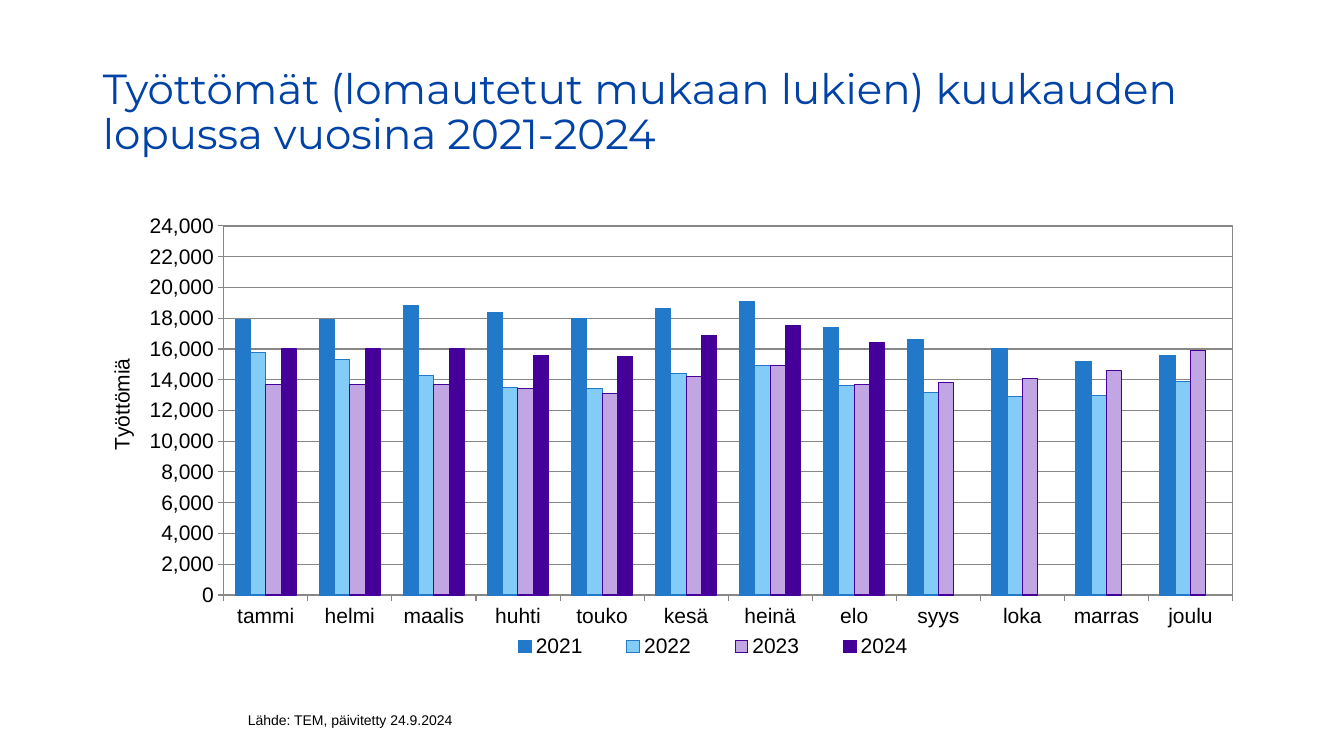
from dataclasses import dataclass

from pptx import Presentation
from pptx.chart.data import CategoryChartData
from pptx.dml.color import RGBColor as Color
from pptx.enum.chart import XL_CHART_TYPE as ChartType
from pptx.enum.chart import XL_LEGEND_POSITION as LegendPosition
from pptx.enum.chart import XL_TICK_MARK as TickMark
from pptx.enum.text import MSO_ANCHOR as Anchor
from pptx.enum.text import MSO_AUTO_SIZE as AutoSize
from pptx.enum.text import PP_ALIGN as Align
from pptx.oxml import parse_xml
from pptx.oxml.ns import nsdecls, qn
from pptx.util import Inches, Pt


@dataclass(frozen=True)
class Theme:
    title_font: str = "Montserrat"
    body_font: str = "Arial"
    title_size: int = 30
    chart_size: int = 15
    source_size: int = 10
    title_color: str = "0042A6"
    text_color: str = "000000"
    grid_color: str = "878787"
    blue: str = "2278C9"
    light_blue: str = "84CCF8"
    lilac: str = "C2A6E3"
    purple: str = "450099"


THEME = Theme()
MONTHS = ["tammi", "helmi", "maalis", "huhti", "touko", "kesä",
          "heinä", "elo", "syys", "loka", "marras", "joulu"]
UNEMPLOYED = {
    "2021": [17900, 17900, 18800, 18400, 18000, 18600,
             19100, 17400, 16600, 16000, 15200, 15600],
    "2022": [15800, 15300, 14300, 13500, 13400, 14400,
             14900, 13600, 13200, 12900, 13000, 13900],
    "2023": [13700, 13700, 13700, 13400, 13100, 14200,
             14900, 13700, 13800, 14100, 14600, 15900],
    "2024": [16000, 16000, 16000, 15600, 15500, 16900,
             17500, 16400, None, None, None, None],
}
YEAR_COLORS = [(THEME.blue, THEME.blue), (THEME.light_blue, THEME.blue),
               (THEME.lilac, THEME.purple), (THEME.purple, THEME.purple)]


def apply_format(target, values):
    for name, value in values.items():
        setattr(target, name, value)


def format_font(font, name, size, color):
    apply_format(font, {"name": name, "size": Pt(size), "bold": False})
    font.color.rgb = Color.from_string(color)


def format_line(line, color):
    line.color.rgb = Color.from_string(color)
    line.width = Pt(0.75)


def place(shape, box):
    apply_format(shape, dict(zip(("left", "top", "width", "height"), map(Inches, box))))


def set_layout(element, index, **values):
    for layout in element.findall(qn("c:layout")):
        element.remove(layout)
    target = '<c:layoutTarget val="inner"/>' if index == 0 else ""
    modes = '<c:xMode val="edge"/><c:yMode val="edge"/>'
    sizes = "".join(f'<c:{name} val="{value}"/>' for name, value in values.items())
    element.insert(index, parse_xml(
        f'<c:layout {nsdecls("c")}><c:manualLayout>{target}{modes}{sizes}'
        "</c:manualLayout></c:layout>"))


def add_title(slide, box):
    title = slide.shapes.title
    place(title, box)
    frame = title.text_frame
    frame.text = "Työttömät (lomautetut mukaan lukien) kuukauden lopussa vuosina 2021-2024"
    apply_format(frame, {"word_wrap": True, "auto_size": AutoSize.NONE,
                         "vertical_anchor": Anchor.MIDDLE})
    paragraph = frame.paragraphs[0]
    apply_format(paragraph, {"alignment": Align.LEFT, "line_spacing": 0.9})
    format_font(paragraph.font, THEME.title_font, THEME.title_size, THEME.title_color)


def add_source(slide, box):
    frame = slide.shapes.add_textbox(*map(Inches, box)).text_frame
    frame.text = "Lähde: TEM, päivitetty 24.9.2024"
    frame.word_wrap = True
    format_font(frame.paragraphs[0].font, THEME.body_font, THEME.source_size, THEME.text_color)


def format_axes(chart):
    value_axis = chart.value_axis
    apply_format(value_axis, {"minimum_scale": 0, "maximum_scale": 24000, "major_unit": 2000,
                              "has_major_gridlines": True})
    apply_format(value_axis.tick_labels, {"number_format": "#,##0",
                                          "number_format_is_linked": False})
    for axis in (chart.category_axis, value_axis):
        apply_format(axis, {"major_tick_mark": TickMark.OUTSIDE,
                            "minor_tick_mark": TickMark.NONE})
        format_line(axis.format.line, THEME.grid_color)
    format_line(value_axis.major_gridlines.format.line, THEME.grid_color)
    title = value_axis.axis_title
    title.text_frame.text = "Työttömiä"
    format_font(title.text_frame.paragraphs[0].runs[0].font,
                THEME.body_font, THEME.chart_size, THEME.text_color)
    set_layout(title._element, 1, x=0.01, y=0.32)


def format_plot(chart):
    plot = chart.plots[0]
    apply_format(plot, {"gap_width": 150, "overlap": 0, "vary_by_categories": False})
    for series, (fill, outline) in zip(plot.series, YEAR_COLORS):
        series.format.fill.solid()
        series.format.fill.fore_color.rgb = Color.from_string(fill)
        format_line(series.format.line, outline)
    area = chart._chartSpace.chart.plotArea
    set_layout(area, 0, x=0.113, y=0.04, w=0.87, h=0.803)
    area.append(parse_xml(
        f'<c:spPr {nsdecls("c", "a")}><a:noFill/><a:ln w="9525"><a:solidFill>'
        f'<a:srgbClr val="{THEME.grid_color}"/></a:solidFill></a:ln></c:spPr>'))


def add_unemployment_chart(slide, box):
    data = CategoryChartData(number_format="#,##0")
    data.categories = MONTHS
    for year, values in UNEMPLOYED.items():
        data.add_series(year, values)
    chart = slide.shapes.add_chart(
        ChartType.COLUMN_CLUSTERED, *map(Inches, box), data).chart
    apply_format(chart, {"has_title": False, "has_legend": True})
    format_font(chart.font, THEME.body_font, THEME.chart_size, THEME.text_color)
    apply_format(chart.legend, {"position": LegendPosition.BOTTOM, "include_in_layout": False})
    set_layout(chart.legend._element, 1, x=0.335, y=0.92, w=0.4, h=0.07)
    format_axes(chart)
    format_plot(chart)


def main():
    presentation = Presentation()
    apply_format(presentation, {"slide_width": Inches(13.33), "slide_height": Inches(7.5)})
    slide = presentation.slides.add_slide(presentation.slide_layouts[5])
    add_title(slide, (0.92, 0.58, 11.07, 1.09))
    add_source(slide, (2.36, 7.01, 4.61, 0.4))
    add_unemployment_chart(slide, (0.92, 2.06, 11.5, 4.56))
    presentation.save("out.pptx")


if __name__ == "__main__":
    main()
